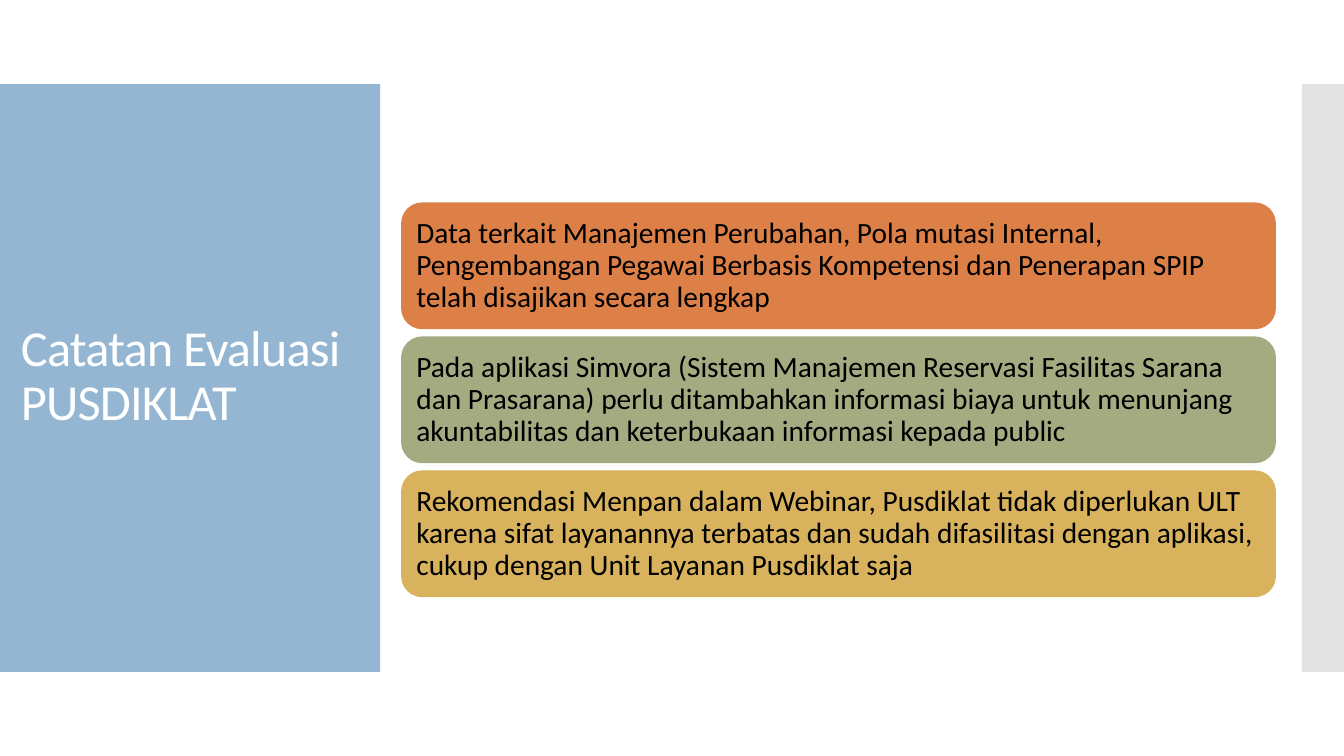
from lxml.etree import SubElement
from pptx import Presentation
from pptx.dml.color import RGBColor
from pptx.enum.shapes import MSO_SHAPE
from pptx.enum.text import MSO_ANCHOR, MSO_AUTO_SIZE, PP_ALIGN
from pptx.oxml.ns import qn
from pptx.util import Inches, Pt

BLUE = RGBColor(0x94, 0xB6, 0xD2)
GREY = RGBColor(0xC8, 0xC8, 0xC8)
ORANGE = RGBColor(0xDD, 0x80, 0x47)
GREEN = RGBColor(0xA5, 0xAB, 0x81)
GOLD = RGBColor(0xD8, 0xB2, 0x5C)
WHITE = RGBColor(0xFF, 0xFF, 0xFF)
BLACK = RGBColor(0x00, 0x00, 0x00)

COLUMNS, ROWS = 32, 18
BAND_TOP, BAND_HEIGHT = 2, 14
CARD_LEFT, CARD_TOP, CARD_WIDTH, CARD_HEIGHT = 9.55, 4.82, 20.83, 3.02
CARD_STEP = 3.19

NOTES = [
    (ORANGE, "Data terkait Manajemen Perubahan, Pola mutasi Internal, "
             "Pengembangan Pegawai Berbasis Kompetensi dan Penerapan SPIP "
             "telah disajikan secara lengkap"),
    (GREEN, "Pada aplikasi Simvora (Sistem Manajemen Reservasi Fasilitas Sarana "
            "dan Prasarana) perlu ditambahkan informasi biaya untuk menunjang "
            "akuntabilitas dan keterbukaan informasi kepada public"),
    (GOLD, "Rekomendasi Menpan dalam Webinar, Pusdiklat tidak diperlukan ULT "
           "karena sifat layanannya terbatas dan sudah difasilitasi dengan aplikasi, "
           "cukup dengan Unit Layanan Pusdiklat saja"),
]


def write(tf, text, size=21, color=BLACK, font="Calibri", inset=0.09, spacing=None):
    """Fill a text frame with one left-aligned, vertically centred paragraph."""
    tf.word_wrap = True
    tf.auto_size = MSO_AUTO_SIZE.NONE
    tf.vertical_anchor = MSO_ANCHOR.MIDDLE
    tf.margin_left = tf.margin_right = tf.margin_top = tf.margin_bottom = Inches(inset)
    p = tf.paragraphs[0]
    p.alignment = PP_ALIGN.LEFT
    p.line_spacing = 0.9
    r = p.add_run()
    r.text = text
    r.font.name = font
    r.font.size = Pt(size)
    r.font.color.rgb = color
    if spacing is not None:
        r.font._element.set("spc", str(round(spacing * 100)))


class SlideBuilder:
    """Places elements on a slide by grid columns and rows."""

    def __init__(self, prs):
        self.column = prs.slide_width / COLUMNS
        self.row = prs.slide_height / ROWS
        self.slide = prs.slides.add_slide(prs.slide_layouts[5])

    def box(self, left, top, width, height):
        return (round(left * self.column), round(top * self.row),
                round(width * self.column), round(height * self.row))

    def panel(self, *area, fill, kind=MSO_SHAPE.RECTANGLE, opacity=None):
        sp = self.slide.shapes.add_shape(kind, *self.box(*area))
        sp.shadow.inherit = False
        sp.fill.solid()
        sp.fill.fore_color.rgb = fill
        sp.line.fill.background()
        if opacity is not None:
            color = sp._element.spPr.find(qn("a:solidFill"))[0]
            SubElement(color, qn("a:alpha")).set("val", str(round(opacity * 100000)))
        return sp

    def card(self, *area, fill, text):
        sp = self.panel(*area, fill=fill, kind=MSO_SHAPE.ROUNDED_RECTANGLE)
        write(sp.text_frame, text)

    def title(self, *area, text):
        """Format the title placeholder and bring it in front of the panels."""
        sp = self.slide.shapes.title
        sp.left, sp.top, sp.width, sp.height = self.box(*area)
        write(sp.text_frame, text, size=36, color=WHITE, inset=0.1, spacing=-0.6)
        self.slide.shapes._spTree.append(sp._element)


def main():
    prs = Presentation()
    prs.slide_width, prs.slide_height = Inches(13.33), Inches(7.5)
    page = SlideBuilder(prs)
    page.panel(0, BAND_TOP, 9.05, BAND_HEIGHT, fill=BLUE)
    page.panel(31, BAND_TOP, 1, BAND_HEIGHT, fill=GREY, opacity=0.5)
    page.title(0.26, 2.95, 8.59, 12.07, text="Catatan Evaluasi PUSDIKLAT")
    for i, (fill, text) in enumerate(NOTES):
        page.card(CARD_LEFT, CARD_TOP + i * CARD_STEP, CARD_WIDTH, CARD_HEIGHT,
                  fill=fill, text=text)
    prs.save("out.pptx")


if __name__ == "__main__":
    main()
